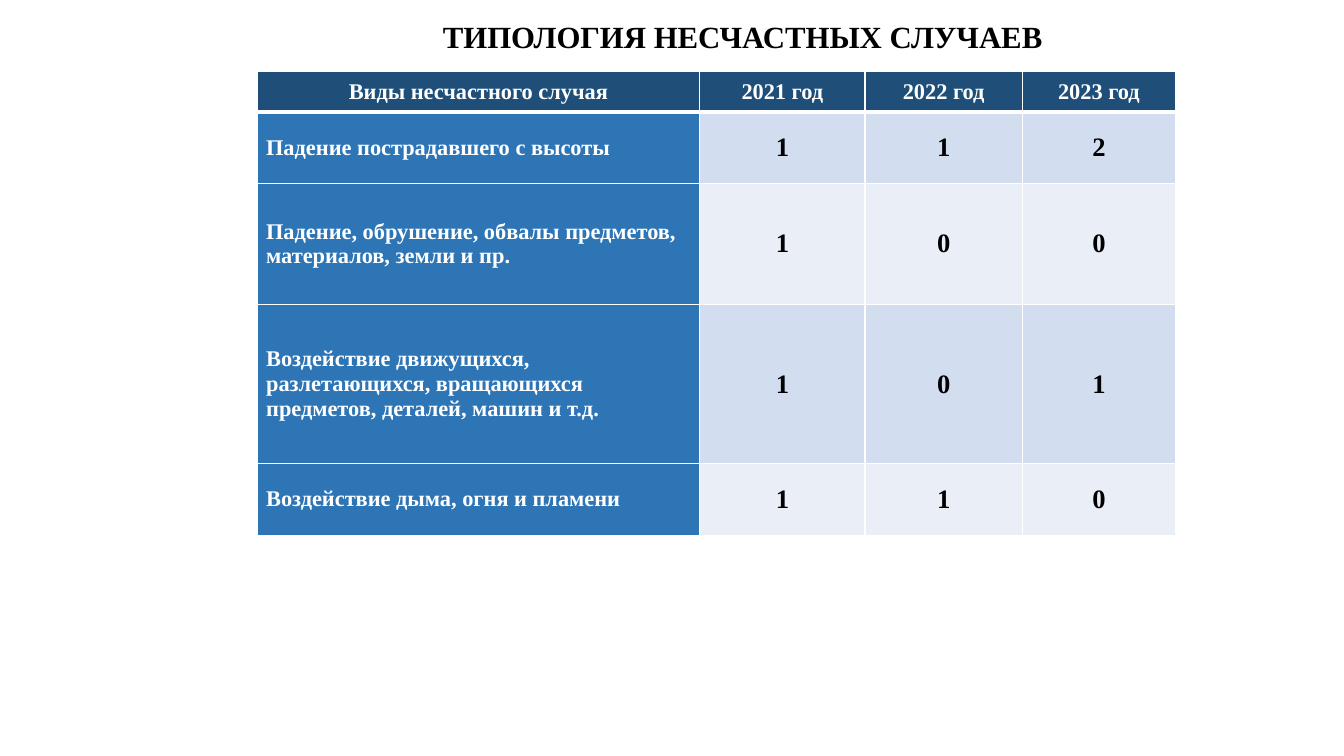
from lxml.etree import SubElement
from pptx import Presentation
from pptx.dml.color import RGBColor
from pptx.enum.text import MSO_ANCHOR as Anchor, MSO_AUTO_SIZE as AutoSize, PP_ALIGN as Align
from pptx.oxml.ns import qn
from pptx.util import Inches, Pt

COLORS = {
    "text": "000000",
    "white": "FFFFFF",
    "header": "1F4E79",
    "label": "2E75B6",
    "band_dark": "D2DEEF",
    "band_light": "EAEFF7",
}

COLUMN_WIDTHS = [4.39, 1.64, 1.56, 1.52]
ROW_HEIGHTS = [0.4, 0.71, 1.2, 1.58, 0.71]
ACCIDENTS = [
    ["Виды несчастного случая", "2021 год", "2022 год", "2023 год"],
    ["Падение пострадавшего с высоты", "1", "1", "2"],
    ["Падение, обрушение, обвалы предметов, материалов, земли и пр.", "1", "0", "0"],
    ["Воздействие движущихся, разлетающихся, вращающихся предметов, деталей, машин и т.д.", "1", "0", "1"],
    ["Воздействие дыма, огня и пламени", "1", "1", "0"],
]


class SlideBuilder:
    font_name = "Times New Roman"

    def __init__(self, slide):
        self.slide = slide

    def color(self, name):
        return RGBColor.from_string(COLORS[name])

    def set_text(self, text_frame, text, size, color, align):
        text_frame.text = text
        paragraph = text_frame.paragraphs[0]
        paragraph.alignment = align
        font = paragraph.runs[0].font
        font.name = self.font_name
        font.size = Pt(size)
        font.bold = True
        font.color.rgb = self.color(color)

    def title(self, text, left, top, width, height):
        shape = self.slide.shapes.add_textbox(Inches(left), Inches(top), Inches(width), Inches(height))
        text_frame = shape.text_frame
        text_frame.word_wrap = True
        text_frame.auto_size = AutoSize.SHAPE_TO_FIT_TEXT
        self.set_text(text_frame, text, 22, "text", Align.CENTER)

    def borders(self, cell, top, bottom):
        properties = cell._tc.get_or_add_tcPr()
        for side, width in (("L", 1), ("R", 1), ("T", top), ("B", bottom)):
            line = SubElement(properties, qn(f"a:ln{side}"), w=str(Pt(width)))
            fill = SubElement(line, qn("a:solidFill"))
            SubElement(fill, qn("a:srgbClr"), val=COLORS["white"])

    def cell(self, cell, text, row, column):
        if row == 0:
            fill, size, color, align = "header", 16, "white", Align.CENTER
        elif column == 0:
            fill, size, color, align = "label", 16, "white", Align.LEFT
        else:
            fill = "band_dark" if row % 2 else "band_light"
            size, color, align = 19, "text", Align.CENTER
        self.borders(cell, top=3 if row == 1 else 1, bottom=3 if row == 0 else 1)
        cell.fill.solid()
        cell.fill.fore_color.rgb = self.color(fill)
        cell.vertical_anchor = Anchor.MIDDLE
        cell.margin_left = cell.margin_right = Inches(0.09)
        cell.margin_top = cell.margin_bottom = Inches(0)
        self.set_text(cell.text_frame, text, size, color, align)

    def table(self, rows, left, top, widths, heights):
        frame = self.slide.shapes.add_table(
            len(rows), len(widths), Inches(left), Inches(top), Inches(sum(widths)), Inches(sum(heights))
        )
        table = frame.table
        for column, width in zip(table.columns, widths):
            column.width = Inches(width)
        for row, height in zip(table.rows, heights):
            row.height = Inches(height)
        for row, texts in enumerate(rows):
            for column, text in enumerate(texts):
                self.cell(table.cell(row, column), text, row, column)


def main():
    presentation = Presentation()
    presentation.slide_width = Inches(13.33)
    presentation.slide_height = Inches(7.5)
    slide = presentation.slides.add_slide(presentation.slide_layouts[6])
    builder = SlideBuilder(slide)
    builder.title("ТИПОЛОГИЯ НЕСЧАСТНЫХ СЛУЧАЕВ", 1.39, 0.13, 11.95, 0.47)
    builder.table(ACCIDENTS, 2.55, 0.71, COLUMN_WIDTHS, ROW_HEIGHTS)
    presentation.save("out.pptx")


if __name__ == "__main__":
    main()
